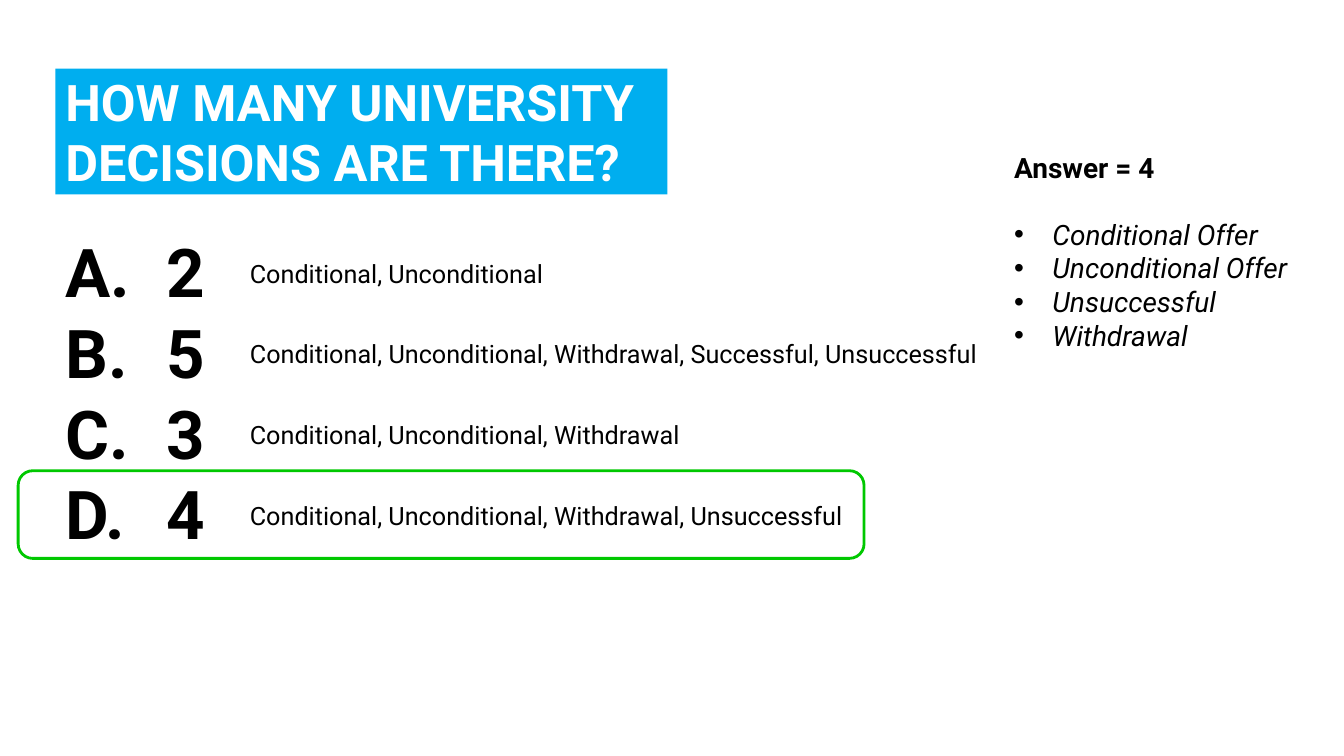
from lxml.etree import SubElement
from pptx import Presentation
from pptx.dml.color import RGBColor
from pptx.enum.shapes import MSO_SHAPE as Shape
from pptx.enum.text import MSO_ANCHOR as Anchor, MSO_AUTO_SIZE as AutoSize, PP_ALIGN as Align
from pptx.oxml.ns import qn
from pptx.util import Inches, Pt

COLORS = {"banner": "00AEEF", "highlight": "00C800", "text": "000000", "light": "FFFFFF"}
FONT = "Roboto"

# Count, explanation, width of the explanation box
OPTIONS = [
    ("2", "Conditional, Unconditional", 6.5),
    ("5", "Conditional, Unconditional, Withdrawal, Successful, Unsuccessful", 7.59),
    ("3", "Conditional, Unconditional, Withdrawal", 6.5),
    ("4", "Conditional, Unconditional, Withdrawal, Unsuccessful", 6.5),
]
DECISIONS = ["Conditional Offer", "Unconditional Offer", "Unsuccessful", "Withdrawal"]
EXPLANATION_TOP = 2.51
OPTION_PITCH = 0.8


class QuizPage:
    def __init__(self, page):
        self.page = page

    def style(self, para, size, color="text", bold=False, italic=False):
        font = para.font
        font.name, font.size = FONT, Pt(size)
        font.bold, font.italic = bold, italic
        font.color.rgb = RGBColor.from_string(COLORS[color])

    def mark(self, para, indent, tag, **attributes):
        """Give a paragraph a hanging bullet or number."""
        properties = para._p.get_or_add_pPr()
        properties.set("marL", str(Inches(indent)))
        properties.set("indent", str(-Inches(indent)))
        SubElement(properties, qn(tag), attributes)

    def shape(self, kind, left, top, width, height, fill=None, line=None):
        box = self.page.shapes.add_shape(
            kind, Inches(left), Inches(top), Inches(width), Inches(height))
        box.shadow.inherit = False
        if fill:
            box.fill.solid()
            box.fill.fore_color.rgb = RGBColor.from_string(COLORS[fill])
        else:
            box.fill.background()
        if line:
            box.line.color.rgb = RGBColor.from_string(COLORS[line])
            box.line.width = Pt(2)
        else:
            box.line.fill.background()
        return box

    def banner(self, text, left, top, width, height):
        box = self.shape(Shape.RECTANGLE, left, top, width, height, fill="banner")
        frame = box.text_frame
        frame.word_wrap = True
        frame.vertical_anchor = Anchor.MIDDLE
        para = frame.paragraphs[0]
        para.text = text
        para.alignment = Align.LEFT
        self.style(para, 36, "light", bold=True)

    def text(self, lines, left, top, width, height):
        """Add a text box and return its paragraphs, one for each line."""
        box = self.page.shapes.add_textbox(
            Inches(left), Inches(top), Inches(width), Inches(height))
        frame = box.text_frame
        frame.word_wrap = True
        frame.auto_size = AutoSize.SHAPE_TO_FIT_TEXT
        frame.text = "\n".join(lines)
        return frame.paragraphs

    def lettered_list(self, lines, left, top, width, height):
        for para in self.text(lines, left, top, width, height):
            self.mark(para, 1, "a:buAutoNum", type="alphaUcPeriod")
            self.style(para, 48, bold=True)

    def answer(self, heading, items, left, top, width, height):
        title, *bullets = self.text([heading, *items], left, top, width, height)
        title.space_after = Pt(24)
        self.style(title, 20, bold=True)
        for para in bullets:
            self.mark(para, 0.38, "a:buFont", typeface="Arial")
            self.mark(para, 0.38, "a:buChar", char="•")
            self.style(para, 20, italic=True)

    def explanation(self, line, left, top, width):
        self.style(self.text([line], left, top, width, 0.4)[0], 18)


def main():
    deck = Presentation()
    deck.slide_width, deck.slide_height = Inches(13.33), Inches(7.5)
    quiz = QuizPage(deck.slides.add_slide(deck.slide_layouts[6]))

    quiz.banner("HOW MANY UNIVERSITY DECISIONS ARE THERE?", 0.55, 0.68, 6.07, 1.25)
    quiz.lettered_list([count for count, _, _ in OPTIONS], 0.55, 2.24, 1.65, 3.33)
    quiz.shape(Shape.ROUNDED_RECTANGLE, 0.18, 4.67, 8.39, 0.87, line="highlight")
    quiz.answer("Answer = 4", DECISIONS, 9.96, 1.44, 4.56, 2.79)
    for row, (_, line, width) in enumerate(OPTIONS):
        quiz.explanation(line, 2.38, EXPLANATION_TOP + row * OPTION_PITCH, width)

    deck.save("out.pptx")


if __name__ == "__main__":
    main()
